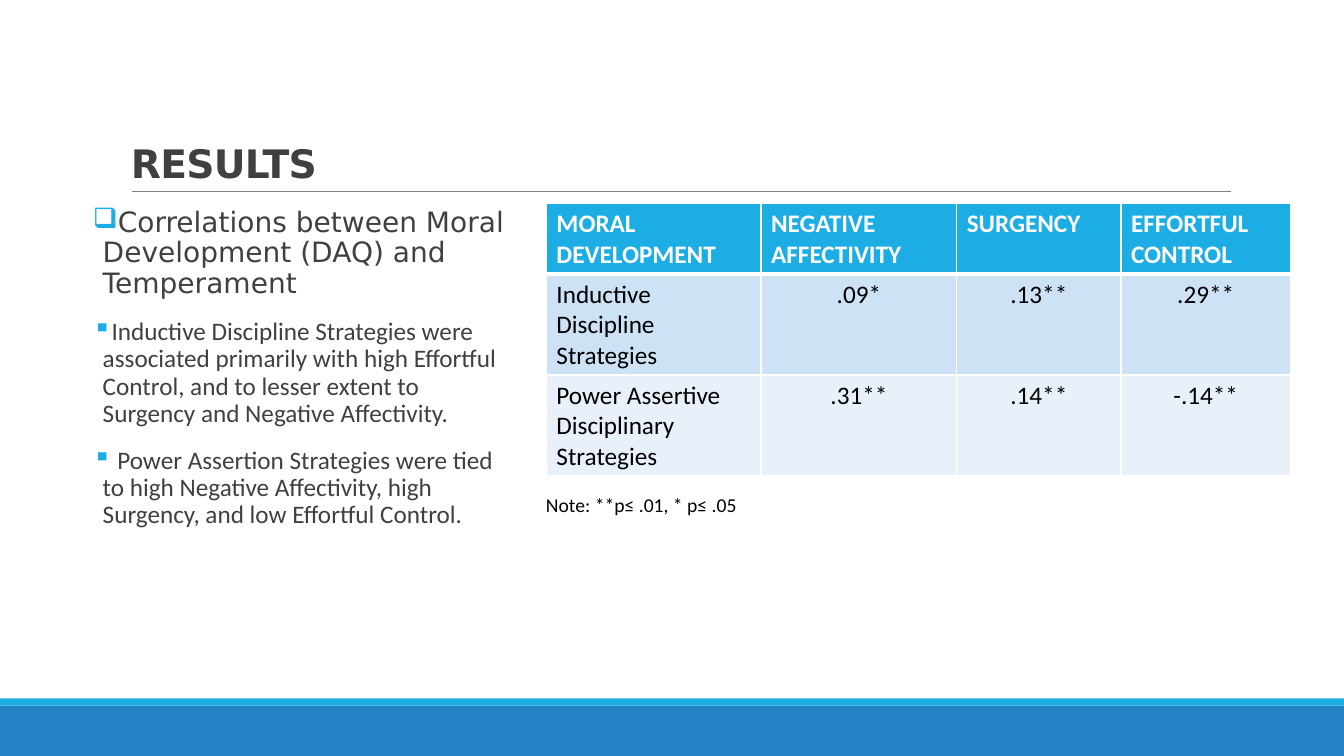
"""Build the results slide with correlations of moral development and temperament."""
from dataclasses import dataclass

from lxml import etree
from pptx import Presentation
from pptx import util as u
from pptx.dml.color import RGBColor
from pptx.enum import shapes, text
from pptx.oxml import ns

COLORS = {
    "band": "2683C6", "accent": "1CADE4", "rule": "808080", "heading": "404040",
    "white": "FFFFFF", "black": "000000", "row_dark": "CDE3F5", "row_light": "E8F1FA",
}
SLIDE_WIDTH, SLIDE_HEIGHT = 33.87, 19.05
HANGING = 0.25


@dataclass(frozen=True)
class Box:
    left: float
    top: float
    width: float
    height: float

    def lengths(self) -> list[u.Length]:
        return [u.Cm(value) for value in (self.left, self.top, self.width, self.height)]


@dataclass(frozen=True)
class Style:
    size: float
    color: str
    font: str = "Calibri"
    bold: bool = False


@dataclass(frozen=True)
class Band:
    box: Box
    color: str


@dataclass(frozen=True)
class Bullet:
    symbol: str
    words: str
    style: Style


@dataclass(frozen=True)
class Row:
    cells: tuple[str, ...]
    height: float
    fill: str
    style: Style
    value_alignment: text.PP_ALIGN
    bottom_border: float = 1


TITLE = Style(28, "heading", "DejaVu Sans", True)
TOPIC = Style(20, "heading", "DejaVu Sans")
FINDING = Style(18, "heading")
HEADER = Style(18, "white", bold=True)
CELL = Style(18, "black")
NOTE = Style(14, "black")

BANDS = [
    Band(Box(0, 17.78, SLIDE_WIDTH, 1.27), "band"),
    Band(Box(0, 17.6, SLIDE_WIDTH, 0.18), "accent"),
]
BULLETS = [
    Bullet("❑", "Correlations between Moral Development (DAQ) and Temperament", TOPIC),
    Bullet("▪", "Inductive Discipline Strategies were associated primarily with high "
           "Effortful Control, and to lesser extent to Surgency and Negative Affectivity.", FINDING),
    Bullet("▪", " Power Assertion Strategies were tied to high Negative Affectivity, "
           "high Surgency, and low Effortful Control.", FINDING),
]
COLUMN_WIDTHS = [5.41, 4.93, 4.14, 4.27]
ROWS = [
    Row(("MORAL DEVELOPMENT", "NEGATIVE AFFECTIVITY", "SURGENCY", "EFFORTFUL CONTROL"),
        1.47, "accent", HEADER, text.PP_ALIGN.LEFT, 3),
    Row(("Inductive Discipline Strategies", ".09*", ".13**", ".29**"),
        1.04, "row_dark", CELL, text.PP_ALIGN.CENTER),
    Row(("Power Assertive Disciplinary Strategies", ".31**", ".14**", "-.14**"),
        1.04, "row_light", CELL, text.PP_ALIGN.CENTER),
]


def rgb(name: str) -> RGBColor:
    return RGBColor.from_string(COLORS[name])


def format_runs(paragraph, style: Style) -> None:
    for run in paragraph.runs:
        run.font.name = style.font
        run.font.size = u.Pt(style.size)
        run.font.bold = style.bold
        run.font.color.rgb = rgb(style.color)


def add_band(slide, band: Band) -> None:
    shape = slide.shapes.add_shape(shapes.MSO_SHAPE.RECTANGLE, *band.box.lengths())
    shape.shadow.inherit = False
    shape.fill.solid()
    shape.fill.fore_color.rgb = rgb(band.color)
    shape.line.fill.background()


def add_rule(slide, left: float, right: float, top: float) -> None:
    rule = slide.shapes.add_connector(
        shapes.MSO_CONNECTOR.STRAIGHT, u.Cm(left), u.Cm(top), u.Cm(right), u.Cm(top))
    rule.line.color.rgb = rgb("rule")
    rule.line.width = u.Pt(0.5)
    etree.SubElement(rule._element.spPr, ns.qn("a:effectLst"))


def add_text(slide, box: Box, words: str, style: Style, wrap: bool = True):
    frame = slide.shapes.add_textbox(*box.lengths()).text_frame
    frame.word_wrap = wrap
    frame.text = words
    for paragraph in frame.paragraphs:
        format_runs(paragraph, style)
    return frame


def add_title(slide, box: Box, words: str) -> None:
    frame = add_text(slide, box, words, TITLE)
    frame.vertical_anchor = text.MSO_ANCHOR.BOTTOM
    paragraph = frame.paragraphs[0]
    paragraph.line_spacing = 0.85
    paragraph.runs[0]._r.get_or_add_rPr().set("spc", "-50")


def set_bullet(paragraph, symbol: str) -> None:
    properties = paragraph._p.get_or_add_pPr()
    properties.set("marL", str(u.Cm(HANGING)))
    properties.set("indent", str(-u.Cm(HANGING)))
    color = etree.SubElement(properties, ns.qn("a:buClr"))
    etree.SubElement(color, ns.qn("a:srgbClr"), val=COLORS["accent"])
    etree.SubElement(properties, ns.qn("a:buChar"), char=symbol)


def add_bullets(slide, box: Box, bullets: list[Bullet]) -> None:
    frame = add_text(slide, box, "\n".join(bullet.words for bullet in bullets), FINDING)
    frame.margin_left = frame.margin_right = 0
    for paragraph, bullet in zip(frame.paragraphs, bullets):
        format_runs(paragraph, bullet.style)
        paragraph.line_spacing = 0.9
        paragraph.space_before = u.Pt(12)
        paragraph.space_after = u.Pt(2)
        set_bullet(paragraph, bullet.symbol)


def set_borders(cell, widths: dict[str, float]) -> None:
    properties = cell._tc.get_or_add_tcPr()
    for position, (side, width) in enumerate(widths.items()):
        line = etree.Element(ns.qn(f"a:ln{side}"), w=str(u.Pt(width)))
        fill = etree.SubElement(line, ns.qn("a:solidFill"))
        etree.SubElement(fill, ns.qn("a:srgbClr"), val=COLORS["white"])
        properties.insert(position, line)


def add_correlations(slide, left: float, top: float, rows: list[Row]) -> None:
    box = Box(left, top, sum(COLUMN_WIDTHS), sum(row.height for row in rows))
    table = slide.shapes.add_table(len(rows), len(COLUMN_WIDTHS), *box.lengths()).table
    for column, width in zip(table.columns, COLUMN_WIDTHS):
        column.width = u.Cm(width)
    top_border = 1
    for table_row, row in zip(table.rows, rows):
        table_row.height = u.Cm(row.height)
        for index, (cell, words) in enumerate(zip(table_row.cells, row.cells)):
            paragraph = cell.text_frame.paragraphs[0]
            paragraph.text = words
            paragraph.alignment = row.value_alignment if index else text.PP_ALIGN.LEFT
            format_runs(paragraph, row.style)
            cell.fill.solid()
            cell.fill.fore_color.rgb = rgb(row.fill)
            set_borders(cell, {"L": 1, "R": 1, "T": top_border, "B": row.bottom_border})
        top_border = row.bottom_border


def main() -> None:
    presentation = Presentation()
    presentation.slide_width = u.Cm(SLIDE_WIDTH)
    presentation.slide_height = u.Cm(SLIDE_HEIGHT)
    slide = presentation.slides.add_slide(presentation.slide_layouts[6])
    for band in BANDS:
        add_band(slide, band)
    add_rule(slide, 3.33, 31.01, 4.83)
    add_title(slide, Box(3.05, 0.79, 27.94, 4.04), "RESULTS")
    add_bullets(slide, Box(2.34, 5.13, 10.59, 11.18), BULLETS)
    add_correlations(slide, 13.77, 5.13, ROWS)
    note = add_text(slide, Box(13.51, 12.29, 5.49, 0.86), "Note: **p≤ .01, * p≤ .05", NOTE, False)
    note.auto_size = text.MSO_AUTO_SIZE.SHAPE_TO_FIT_TEXT
    presentation.save("out.pptx")


if __name__ == "__main__":
    main()
